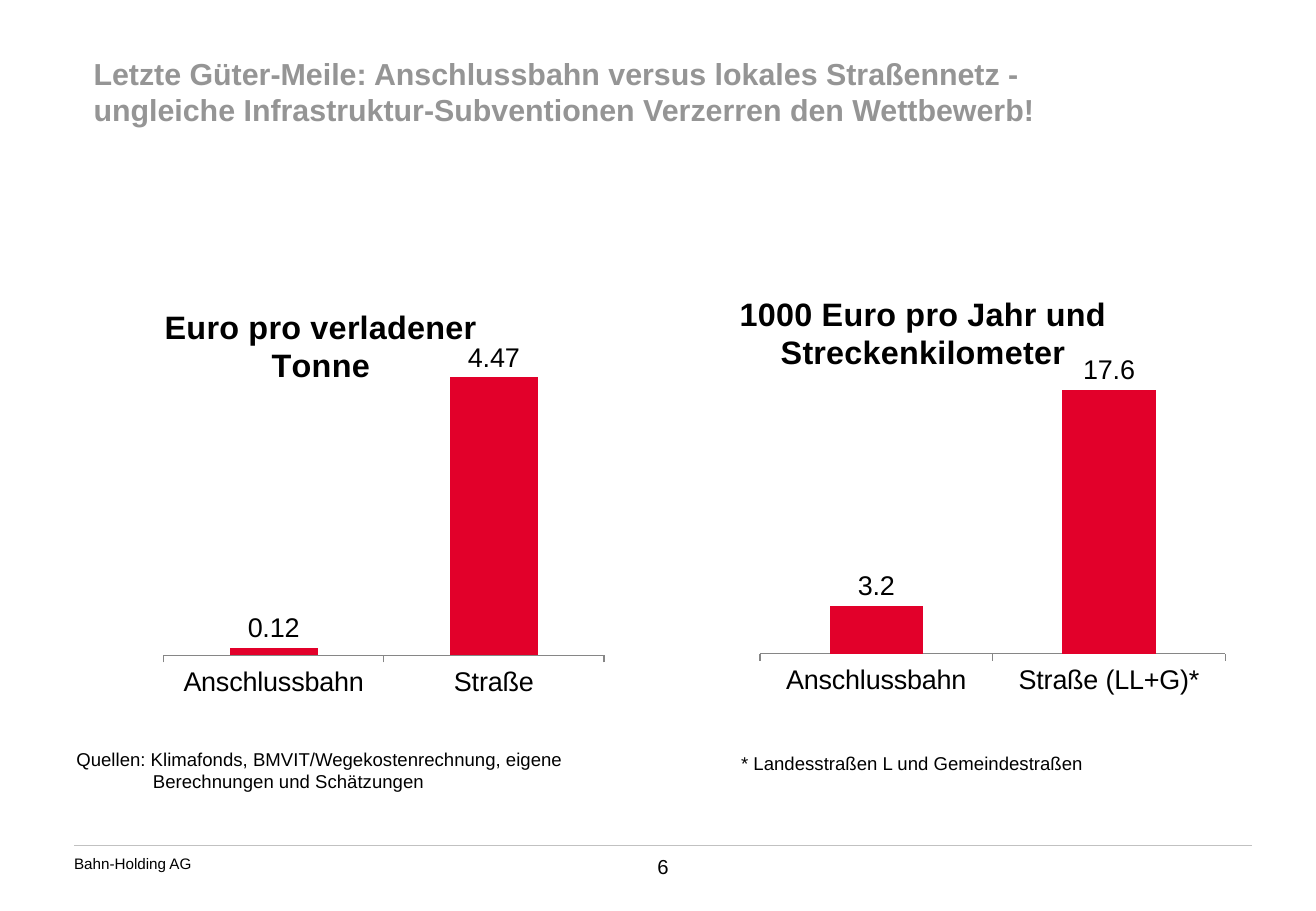
from lxml.etree import SubElement
from pptx import Presentation
from pptx.chart.data import CategoryChartData
from pptx.dml.color import RGBColor
from pptx.enum.chart import XL_CHART_TYPE, XL_LABEL_POSITION, XL_TICK_MARK
from pptx.enum.shapes import MSO_CONNECTOR
from pptx.enum.text import MSO_ANCHOR
from pptx.oxml import parse_xml
from pptx.oxml.ns import nsdecls, qn
from pptx.util import Inches, Pt

BLACK = RGBColor(0x00, 0x00, 0x00)
TITLE_GREY = RGBColor(0x95, 0x95, 0x95)
RULE_GREY = RGBColor(0xC1, 0xC1, 0xC1)
AXIS_GREY = RGBColor(0x86, 0x86, 0x86)
RED = RGBColor(0xE2, 0x00, 0x2A)
FONT = "Arial"
NOTE_MARGINS = (0.1, 0.05, 0.1, 0.05)


def set_font(font, size, color=BLACK, bold=False):
    for name, value in {"name": FONT, "size": Pt(size), "bold": bold}.items():
        setattr(font, name, value)
    font.color.rgb = color


def add_text(page, box, text, size, color=BLACK, bold=False,
             margins=(0, 0, 0, 0), anchor=MSO_ANCHOR.TOP, hanging=0):
    frame = page.shapes.add_textbox(*map(Inches, box)).text_frame
    left, top, right, bottom = map(Inches, margins)
    settings = {
        "word_wrap": True, "vertical_anchor": anchor,
        "margin_left": left, "margin_top": top,
        "margin_right": right, "margin_bottom": bottom,
    }
    for name, value in settings.items():
        setattr(frame, name, value)
    para = frame.paragraphs[0]
    if hanging:
        properties = para._p.get_or_add_pPr()
        properties.set("marL", str(Inches(hanging)))
        properties.set("indent", str(-Inches(hanging)))
    span = para.add_run()
    span.text = text
    set_font(span.font, size, color, bold)


def place_manually(parent, position, values):
    for old in parent.findall(qn("c:layout")):
        parent.remove(old)
    layout = parse_xml(f"<c:layout {nsdecls('c')}/>")
    manual = SubElement(layout, qn("c:manualLayout"))
    for name, value in values.items():
        SubElement(manual, qn(f"c:{name}")).set("val", str(value))
    parent.insert(position, layout)


def add_cost_chart(page, box, title, values, number_format, maximum, title_at, plot):
    data = CategoryChartData(number_format=number_format)
    data.categories = list(values)
    data.add_series("Series 1", list(values.values()))
    chart = page.shapes.add_chart(
        XL_CHART_TYPE.COLUMN_CLUSTERED, *map(Inches, box), data).chart
    chart.has_legend = False
    set_font(chart.font, 16)

    chart.has_title = True
    heading = chart.chart_title
    heading.include_in_layout = False
    heading.text_frame.text = title
    set_font(heading.text_frame.paragraphs[0].runs[0].font, 19.2, bold=True)
    place_manually(chart.element.xpath("c:chart/c:title")[0], 1,
                   {"xMode": "edge", "yMode": "edge",
                    "x": title_at[0], "y": title_at[1]})
    place_manually(chart.element.xpath("c:chart/c:plotArea")[0], 0,
                   {"layoutTarget": "inner", "xMode": "edge", "yMode": "edge",
                    **dict(zip("xywh", plot))})

    scale = {"visible": False, "has_major_gridlines": False,
             "minimum_scale": 0, "maximum_scale": maximum}
    for name, value in scale.items():
        setattr(chart.value_axis, name, value)
    chart.category_axis.major_tick_mark = XL_TICK_MARK.OUTSIDE
    chart.category_axis.format.line.color.rgb = AXIS_GREY
    chart.category_axis.format.line.width = Pt(0.75)

    bars = chart.plots[0]
    for name, value in {"gap_width": 150, "vary_by_categories": False,
                        "has_data_labels": True}.items():
        setattr(bars, name, value)
    labels = {"show_value": True, "number_format": number_format,
              "number_format_is_linked": False,
              "position": XL_LABEL_POSITION.OUTSIDE_END}
    for name, value in labels.items():
        setattr(bars.data_labels, name, value)
    set_font(bars.data_labels.font, 16)
    fill = bars.series[0].format.fill
    fill.solid()
    fill.fore_color.rgb = RED


def add_footer(page, box):
    left, top, width, height = box
    rule = page.shapes.add_connector(
        MSO_CONNECTOR.STRAIGHT, Inches(left), Inches(top),
        Inches(left + width), Inches(top))
    rule.line.color.rgb = RULE_GREY
    rule.line.width = Pt(1)
    SubElement(rule._element.spPr, qn("a:effectLst"))
    add_text(page, (left, top + 0.07, 4.53, 0.23), "Bahn-Holding AG", 9)
    add_text(page, (left + 4.8, top + 0.07, 3.11, height - 0.07), "6", 12)


def main():
    deck = Presentation()
    deck.slide_width, deck.slide_height = Inches(10.83), Inches(7.5)
    page = deck.slides.add_slide(deck.slide_layouts[6])
    add_footer(page, (0.61, 6.96, 9.69, 0.47))
    add_text(page, (0.77, 0.36, 8.27, 0.69),
             "Letzte Güter-Meile: Anschlussbahn versus lokales Straßennetz - "
             "ungleiche Infrastruktur-Subventionen Verzerren den Wettbewerb!",
             18, TITLE_GREY, True, anchor=MSO_ANCHOR.BOTTOM)
    add_cost_chart(page, (1.11, 2.18, 3.94, 4.07), "Euro pro verladener Tonne",
                   {"Anschlussbahn": 0.12, "Straße": 4.47}, "0.00", 5,
                   (0.05, 0.07), (0.06, 0.16, 0.92, 0.63))
    add_cost_chart(page, (5.78, 2.06, 4.31, 4.26),
                   "1000 Euro pro Jahr und Streckenkilometer",
                   {"Anschlussbahn": 3.2, "Straße (LL+G)*": 17.6}, "0.0", 20,
                   (0.06, 0.07), (0.11, 0.2, 0.89, 0.58))
    add_text(page, (0.53, 6.11, 4.52, 0.65),
             "Quellen: Klimafonds, BMVIT/Wegekostenrechnung, eigene "
             "Berechnungen und Schätzungen",
             11, margins=NOTE_MARGINS, hanging=0.63)
    add_text(page, (6, 6.14, 4.52, 0.46), "* Landesstraßen L und Gemeindestraßen",
             11, margins=NOTE_MARGINS)
    deck.save("out.pptx")


if __name__ == "__main__":
    main()
